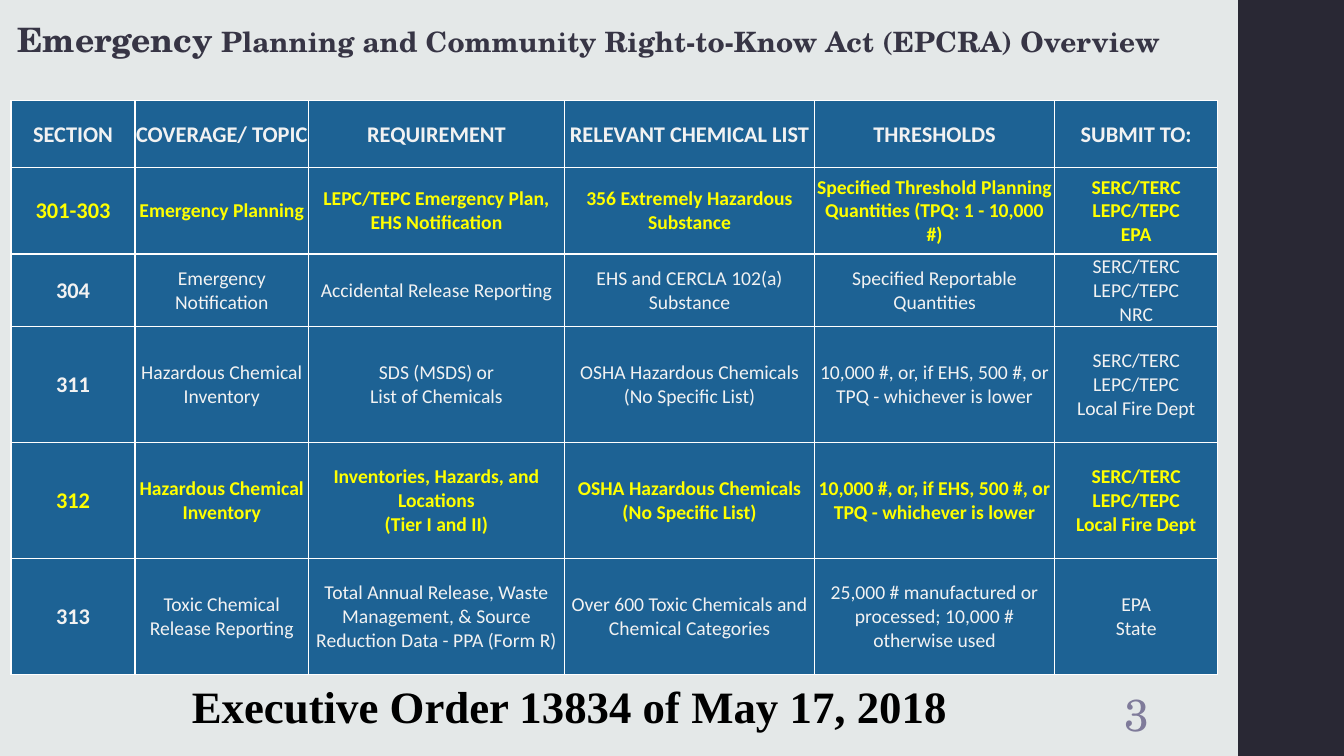
"""Build the EPCRA overview slide: title, section table, closing line and side band."""
from lxml.etree import SubElement
from pptx import Presentation
from pptx.dml.color import RGBColor
from pptx.enum.shapes import MSO_SHAPE as Shape
from pptx.enum.text import MSO_ANCHOR as Anchor, MSO_AUTO_SIZE as AutoSize, PP_ALIGN as Align
from pptx.oxml.ns import qn
from pptx.util import Inches, Pt

TITLE = [("Emergency", 24), (" Planning and Community Right-to-Know Act (EPCRA) Overview", 20)]
ORDER = "Executive Order 13834 of May 17, 2018"
PAGE = "3"
HEADINGS = ("SECTION", "COVERAGE/ TOPIC", "REQUIREMENT", "RELEVANT CHEMICAL LIST",
            "THRESHOLDS", "SUBMIT TO:")
STATE_AND_LOCAL = "SERC/TERC\nLEPC/TEPC\n"
OSHA_LIST = "OSHA Hazardous Chemicals\n(No Specific List)"
LOWER_LIMIT = "10,000 #, or, if EHS, 500 #, or TPQ - whichever is lower"
SECTIONS = [
    ("301-303", "Emergency Planning", "LEPC/TEPC Emergency Plan, EHS Notification",
     "356 Extremely Hazardous Substance",
     "Specified Threshold Planning Quantities (TPQ: 1 - 10,000 #)", STATE_AND_LOCAL + "EPA"),
    ("304", "Emergency Notification", "Accidental Release Reporting",
     "EHS and CERCLA 102(a) Substance", "Specified Reportable Quantities",
     STATE_AND_LOCAL + "NRC"),
    ("311", "Hazardous Chemical Inventory", "SDS (MSDS) or\nList of Chemicals",
     OSHA_LIST, LOWER_LIMIT, STATE_AND_LOCAL + "Local Fire Dept"),
    ("312", "Hazardous Chemical Inventory",
     "Inventories, Hazards, and Locations\n(Tier I and II)",
     OSHA_LIST, LOWER_LIMIT, STATE_AND_LOCAL + "Local Fire Dept"),
    ("313", "Toxic Chemical Release Reporting",
     "Total Annual Release, Waste Management, & Source Reduction Data - PPA (Form R)",
     "Over 600 Toxic Chemicals and Chemical Categories",
     "25,000 # manufactured or processed; 10,000 # otherwise used", "EPA\nState"),
]
HIGHLIGHTED = {"301-303", "312"}
COLUMNS = (1.23, 1.72, 2.54, 2.48, 2.38, 1.62)
ROWS = (0.66, 0.86, 0.72, 1.15, 1.15, 1.15)
COLORS = {"background": "E4E8E8", "band": "292834", "title": "373545", "cell": "1D6294",
          "text": "F2F2F2", "highlight": "FFFF00", "rule": "FFFFFF", "order": "000000",
          "page": "7F7B9A"}
SERIF = "TeX Gyre Schola"
WIDTH, HEIGHT, BAND_LEFT = 13.33, 7.5, 12.28


def color(name):
    return RGBColor.from_string(COLORS[name])


def style(font, face, size, tint, bold):
    for key, value in {"name": face, "size": Pt(size), "bold": bold}.items():
        setattr(font, key, value)
    font.color.rgb = color(tint)


def set_frame(frame, **values):
    for key, value in values.items():
        setattr(frame, key, value)


def add_line(slide, text, place, face, tint, bold, **values):
    frame = slide.shapes.add_textbox(*map(Inches, place)).text_frame
    set_frame(frame, word_wrap=True, **values)
    frame.text = text
    frame.paragraphs[0].alignment = Align.CENTER
    style(frame.paragraphs[0].runs[0].font, face, 32, tint, bold)


def fill_cell(cell, text, size, tint, bold):
    edge = Inches(0.01)
    set_frame(cell, margin_left=edge, margin_right=edge, margin_top=edge, margin_bottom=0,
              vertical_anchor=Anchor.MIDDLE)
    cell.text_frame.text = text
    for paragraph in cell.text_frame.paragraphs:
        paragraph.alignment = Align.CENTER
        style(paragraph.runs[0].font, "Calibri", size, tint, bold)
    properties = cell._tc.get_or_add_tcPr()
    for side in ("a:lnL", "a:lnR", "a:lnT", "a:lnB"):
        rule = SubElement(properties, qn(side), w=str(Pt(1)))
        SubElement(SubElement(rule, qn("a:solidFill")), qn("a:srgbClr"), val=COLORS["rule"])
    cell.fill.solid()
    cell.fill.fore_color.rgb = color("cell")


def add_sections(slide):
    place = (0.11, 1, sum(COLUMNS), sum(ROWS))
    table = slide.shapes.add_table(len(ROWS), len(COLUMNS), *map(Inches, place)).table
    for column, width in zip(table.columns, COLUMNS):
        column.width = Inches(width)
    for row, height, texts in zip(table.rows, ROWS, [HEADINGS] + SECTIONS):
        row.height = Inches(height)
        heading, highlighted = texts is HEADINGS, texts[0] in HIGHLIGHTED
        tint = "highlight" if highlighted else "text"
        for index, (cell, text) in enumerate(zip(row.cells, texts)):
            large = heading or index == 0
            fill_cell(cell, text, 16 if large else 14, tint, large or highlighted)


def main():
    deck = Presentation()
    deck.slide_width, deck.slide_height = Inches(WIDTH), Inches(HEIGHT)
    slide = deck.slides.add_slide(deck.slide_layouts[5])
    slide.background.fill.solid()
    slide.background.fill.fore_color.rgb = color("background")

    band_place = (BAND_LEFT, 0, WIDTH - BAND_LEFT, HEIGHT)
    band = slide.shapes.add_shape(Shape.RECTANGLE, *map(Inches, band_place))
    band.shadow.inherit = False
    band.fill.solid()
    band.fill.fore_color.rgb = color("band")
    band.line.fill.background()

    title = slide.shapes.title
    title.left, title.top, title.width, title.height = map(Inches, (0, 0.14, 12.24, 0.67))
    set_frame(title.text_frame, word_wrap=True, auto_size=AutoSize.NONE,
              vertical_anchor=Anchor.TOP, margin_left=Inches(0.17))
    title.text_frame.paragraphs[0].alignment = Align.LEFT
    for text, size in TITLE:
        run = title.text_frame.paragraphs[0].add_run()
        run.text = text
        style(run.font, SERIF, size, "title", True)

    add_sections(slide)
    add_line(slide, ORDER, (0.4, 6.68, 10.5, 0.65), "Times New Roman", "order", True)
    add_line(slide, PAGE, (10.9, 6.75, 0.75, 0.65), SERIF, "page", False,
             vertical_anchor=Anchor.MIDDLE, margin_left=Inches(0.03), margin_right=Inches(0.03))
    deck.save("out.pptx")


if __name__ == "__main__":
    main()
